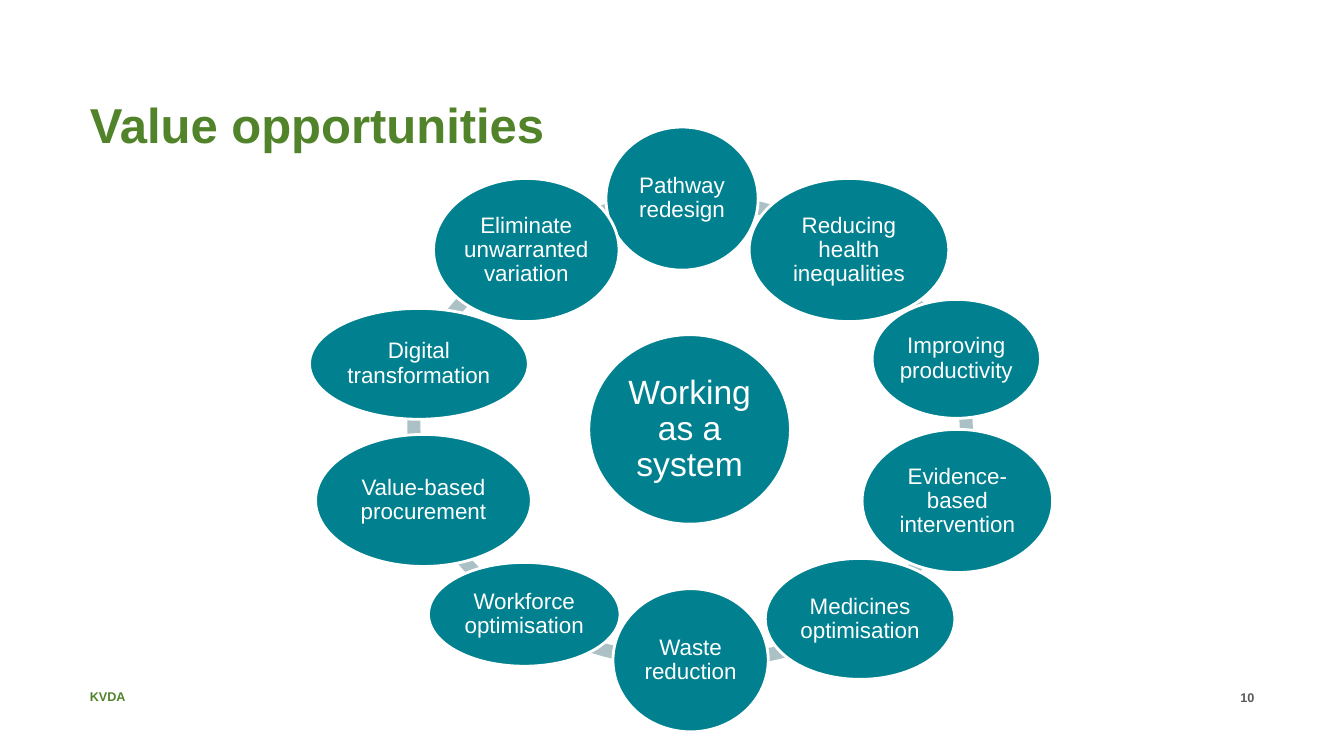
from pptx import Presentation
from pptx.dml.color import RGBColor
from pptx.enum.shapes import MSO_SHAPE as Preset
from pptx.enum.text import MSO_ANCHOR as Anchor, PP_ALIGN as Align
from pptx.util import Inches, Pt

GREEN = RGBColor(0x51, 0x83, 0x2B)
TEAL = RGBColor(0x01, 0x81, 0x8F)
PALE = RGBColor(0xAB, 0xC1, 0xC6)
GREY = RGBColor(0x59, 0x58, 0x57)
WHITE = RGBColor(0xFF, 0xFF, 0xFF)

TITLE = "Value opportunities"
FOOTER = "KVDA"
PAGE_NUMBER = "10"

# Text, left, top, width, height
HUB = ("Working as a system", 5.84, 3.32, 2.0, 1.88)
OPPORTUNITIES = [
    ("Pathway redesign", 6.01, 1.26, 1.51, 1.42),
    ("Reducing health inequalities", 7.43, 1.77, 1.98, 1.42),
    ("Improving productivity", 8.65, 2.97, 1.67, 1.18),
    ("Evidence- based intervention", 8.55, 4.26, 1.89, 1.42),
    ("Medicines optimisation", 7.59, 5.54, 1.88, 1.2),
    ("Waste reduction", 6.08, 5.84, 1.54, 1.42),
    ("Workforce optimisation", 4.25, 5.58, 1.9, 1.03),
    ("Value-based procurement", 3.13, 4.31, 2.14, 1.31),
    ("Digital transformation", 3.07, 3.06, 2.17, 1.1),
    ("Eliminate unwarranted variation", 4.3, 1.77, 1.84, 1.42),
]

# Left, top, width, start angle, end angle (degrees, clockwise from the right)
ARC_HEIGHT = 4.64
ARC_THICKNESS = 0.028
ARCS = [
    (4.34, 1.93, 4.64, 230.83, 272.79),
    (3.93, 2.2, 4.64, 203.55, 243.07),
    (4.04, 1.9, 4.64, 160.95, 195.49),
    (3.99, 1.77, 4.64, 119.14, 157.67),
    (4.26, 1.95, 4.64, 83.41, 127.26),
    (4.88, 1.96, 4.64, 54.27, 98.83),
    (5.02, 1.87, 4.64, 19.86, 58.69),
    (3.84, 1.98, 5.81, 341.61, 17.24),
    (5.09, 2.21, 4.64, 296.24, 334.95),
    (4.65, 1.93, 4.64, 265.06, 309.4),
]
ADJUSTMENT_PER_DEGREE = 0.6


def write(frame, text, *, size, color, bold=False, align=Align.LEFT,
          anchor=Anchor.MIDDLE, inset=0, line_spacing=1.0):
    frame.word_wrap = True
    frame.vertical_anchor = anchor
    frame.margin_left = frame.margin_right = Inches(inset)
    frame.margin_top = frame.margin_bottom = Inches(inset)
    paragraph = frame.paragraphs[0]
    paragraph.alignment = align
    paragraph.line_spacing = line_spacing
    run = paragraph.add_run()
    run.text = text
    run.font.name = "Arial"
    run.font.size = Pt(size)
    run.font.bold = bold
    run.font.color.rgb = color


def add_label(slide, box, text, **text_format):
    label = slide.shapes.add_textbox(*map(Inches, box))
    write(label.text_frame, text, **text_format)


def add_filled(slide, preset, box, color):
    shape = slide.shapes.add_shape(preset, *map(Inches, box))
    shape.shadow.inherit = False
    shape.fill.solid()
    shape.fill.fore_color.rgb = color
    shape.line.fill.background()
    return shape


def add_arc(slide, left, top, width, start, end):
    arc = add_filled(slide, Preset.BLOCK_ARC, (left, top, width, ARC_HEIGHT), PALE)
    arc.adjustments[0] = start * ADJUSTMENT_PER_DEGREE
    arc.adjustments[1] = end * ADJUSTMENT_PER_DEGREE
    arc.adjustments[2] = ARC_THICKNESS


def add_bubble(slide, text, *box, size=16, inset=0.02):
    bubble = add_filled(slide, Preset.OVAL, box, TEAL)
    bubble.line.color.rgb = WHITE
    bubble.line.width = Pt(2)
    write(bubble.text_frame, text, size=size, color=WHITE, align=Align.CENTER,
          inset=inset, line_spacing=0.9)


def main():
    prs = Presentation()
    prs.slide_width, prs.slide_height = Inches(13.33), Inches(7.5)
    slide = prs.slides.add_slide(prs.slide_layouts[6])

    add_label(slide, (0.89, 6.75, 3.15, 0.31), FOOTER, size=9, color=GREEN, bold=True)
    add_label(slide, (0.89, 0.93, 11.55, 0.59), TITLE, size=35, color=GREEN,
              bold=True, anchor=Anchor.BOTTOM)
    add_label(slide, (11.92, 6.84, 0.52, 0.15), PAGE_NUMBER, size=9, color=GREY,
              bold=True, align=Align.RIGHT)

    for arc in ARCS:
        add_arc(slide, *arc)
    add_bubble(slide, *HUB, size=24, inset=0.03)
    for opportunity in OPPORTUNITIES:
        add_bubble(slide, *opportunity)

    prs.save("out.pptx")


if __name__ == "__main__":
    main()
